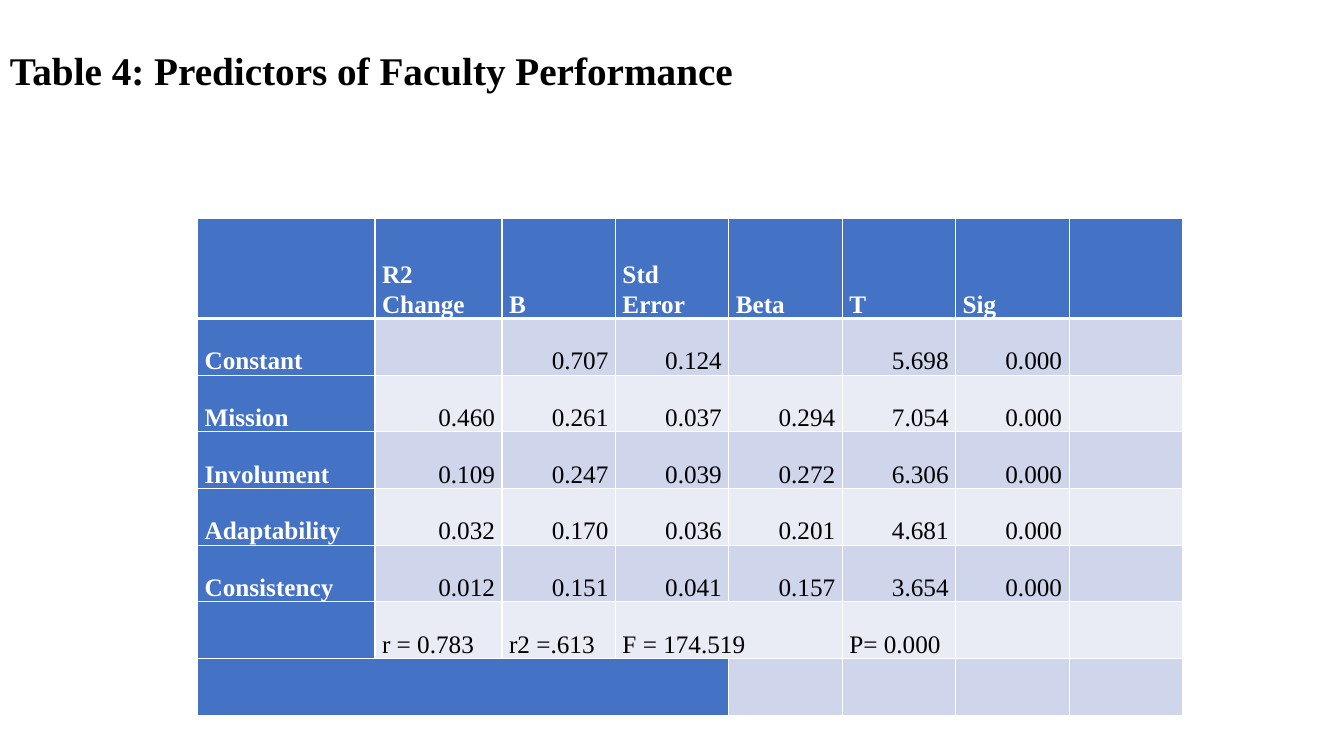
"""Build a slide with a regression table of faculty performance predictors."""
import dataclasses

import lxml.etree
import pptx
import pptx.dml.color
import pptx.enum.text
import pptx.oxml.ns
import pptx.util

Inches = pptx.util.Inches
Pt = pptx.util.Pt
ANCHOR = pptx.enum.text.MSO_ANCHOR
ALIGN = pptx.enum.text.PP_ALIGN


@dataclasses.dataclass(frozen=True)
class Theme:
    font: str = "Times New Roman"
    title_size: int = 28
    cell_size: int = 18
    dark: str = "000000"
    light: str = "FFFFFF"
    accent: str = "4472C4"
    bands: tuple = ("E9EBF5", "CFD5EA")
    rule: int = 1
    header_rule: int = 3


THEME = Theme()
COL_WIDTHS = [1.76, 1.26] + [1.125] * 6
ROW_HEIGHTS = [0.99] + [0.5625] * 7
ROWS = [
    ["", "R2 Change", "B", "Std Error", "Beta", "T", "Sig", ""],
    ["Constant", "", "0.707", "0.124", "", "5.698", "0.000", ""],
    ["Mission", "0.460", "0.261", "0.037", "0.294", "7.054", "0.000", ""],
    ["Involument", "0.109", "0.247", "0.039", "0.272", "6.306", "0.000", ""],
    ["Adaptability", "0.032", "0.170", "0.036", "0.201", "4.681", "0.000", ""],
    ["Consistency", "0.012", "0.151", "0.041", "0.157", "3.654", "0.000", ""],
    ["", "r = 0.783", "r2 =.613", "F = 174.519", "", "P= 0.000", "", ""],
    [""] * 8,
]
SUMMARY_ROW = 6
MERGES = [((6, 3), (6, 4)), ((7, 0), (7, 3))]


def rgb(color):
    return pptx.dml.color.RGBColor.from_string(color)


def add_run(p, text, size, color, bold):
    r = p.add_run()
    r.text = text
    r.font.name = THEME.font
    r.font.size = Pt(size)
    r.font.bold = bold
    r.font.color.rgb = rgb(color)


def add_title(slide, text):
    sp = slide.shapes.add_textbox(Inches(0), Inches(0), Inches(11.5), Inches(1.45))
    tf = sp.text_frame
    tf.word_wrap = True
    tf.vertical_anchor = ANCHOR.MIDDLE
    p = tf.paragraphs[0]
    p.line_spacing = 0.9
    add_run(p, text, THEME.title_size, THEME.dark, True)


def set_borders(cell, widths):
    qn = pptx.oxml.ns.qn
    tc_pr = cell._tc.get_or_add_tcPr()
    for i, (side, width) in enumerate(widths.items()):
        ln = lxml.etree.Element(qn(f"a:ln{side}"), w=str(Pt(width)))
        fill = lxml.etree.SubElement(ln, qn("a:solidFill"))
        lxml.etree.SubElement(fill, qn("a:srgbClr"), val=THEME.light)
        tc_pr.insert(i, ln)


def style_cell(cell, text, row, col):
    heading = row == 0 or col == 0
    cell.fill.solid()
    cell.fill.fore_color.rgb = rgb(THEME.accent if heading else THEME.bands[row % 2])
    widths = dict.fromkeys("LRTB", THEME.rule)
    if row < 2:
        widths["B" if row == 0 else "T"] = THEME.header_rule
    set_borders(cell, widths)
    cell.margin_left = cell.margin_right = Inches(0.07)
    cell.margin_top = cell.margin_bottom = Inches(0)
    cell.vertical_anchor = ANCHOR.BOTTOM
    if text:
        p = cell.text_frame.paragraphs[0]
        p.line_spacing = 1.07
        p.alignment = ALIGN.LEFT if heading or row == SUMMARY_ROW else ALIGN.RIGHT
        add_run(p, text, THEME.cell_size, THEME.light if heading else THEME.dark, heading)


def add_predictors_table(slide):
    table = slide.shapes.add_table(
        len(ROW_HEIGHTS), len(COL_WIDTHS), Inches(1.96), Inches(2.17),
        Inches(sum(COL_WIDTHS)), Inches(sum(ROW_HEIGHTS))).table
    table.first_col = True
    for column, width in zip(table.columns, COL_WIDTHS):
        column.width = Inches(width)
    for row, height in zip(table.rows, ROW_HEIGHTS):
        row.height = Inches(height)
    for i, texts in enumerate(ROWS):
        for j, text in enumerate(texts):
            style_cell(table.cell(i, j), text, i, j)
    for first, last in MERGES:
        table.cell(*first).merge(table.cell(*last))


def main():
    prs = pptx.Presentation()
    prs.slide_width, prs.slide_height = Inches(13.33), Inches(7.5)
    slide = prs.slides.add_slide(prs.slide_layouts[6])
    add_title(slide, "Table 4: Predictors of Faculty Performance")
    add_predictors_table(slide)
    prs.save("out.pptx")


if __name__ == "__main__":
    main()
